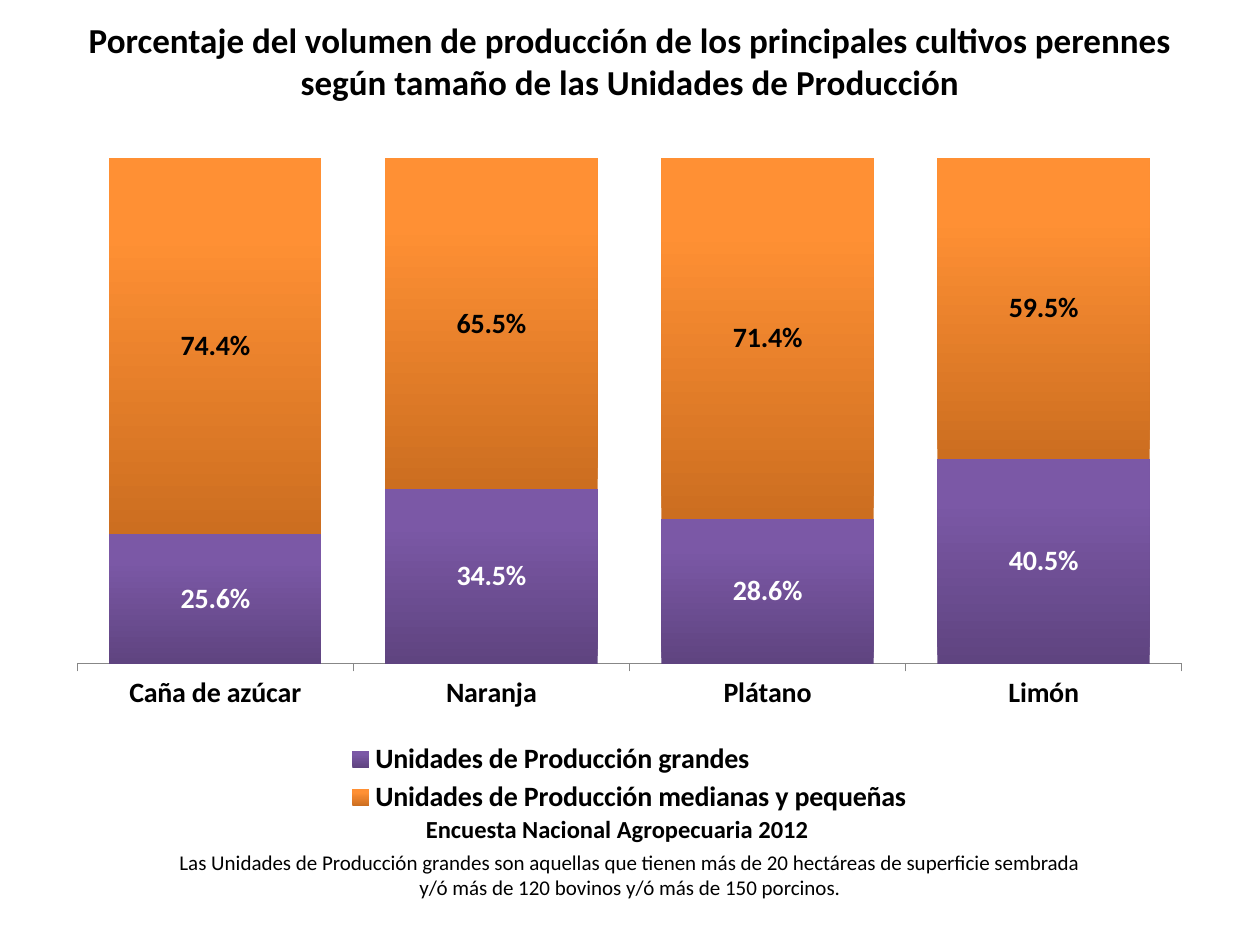
from copy import deepcopy

from lxml.etree import SubElement
from pptx import Presentation
from pptx.chart.data import CategoryChartData
from pptx.dml.color import RGBColor
from pptx.enum.chart import XL_CHART_TYPE as ChartType
from pptx.enum.chart import XL_LABEL_POSITION as LabelPosition
from pptx.enum.chart import XL_LEGEND_POSITION as LegendPosition
from pptx.enum.chart import XL_TICK_MARK as TickMark
from pptx.enum.shapes import MSO_SHAPE as ShapeKind
from pptx.enum.text import MSO_ANCHOR as Anchor
from pptx.enum.text import MSO_AUTO_SIZE as AutoSize
from pptx.enum.text import PP_ALIGN as Align
from pptx.oxml.ns import qn
from pptx.util import Pt

BLACK, WHITE, AXIS_GRAY = "000000", "FFFFFF", "878787"
PERCENT = "0.0%"

CROPS = ["Caña de azúcar", "Naranja", "Plátano", "Limón"]
# name, values, label colour, gradient from bottom to top
UNIT_SIZES = [
    ("Unidades de Producción grandes", [0.256, 0.345, 0.286, 0.405], WHITE,
     [(0, "5F4480"), (0.8, "7B58A6"), (1, "7C57A8")]),
    ("Unidades de Producción medianas y pequeñas", [0.744, 0.655, 0.714, 0.595], BLACK,
     [(0, "CC6E20"), (0.8, "FF9034"), (1, "FF9136")]),
]


def rgb(hex_color):
    return RGBColor.from_string(hex_color)


def apply(target, values):
    for name, value in values.items():
        setattr(target, name, value)


class SlideBuilder:
    font_name = "Calibri"

    def __init__(self, slide):
        self.slide = slide

    def style_font(self, font, size, bold=False, color=BLACK):
        apply(font, {"name": self.font_name, "size": Pt(size), "bold": bold})
        font.color.rgb = rgb(color)

    def fill_text(self, shape, lines, size, bold=False, wrap=True):
        frame = shape.text_frame
        apply(frame, {"text": "\n".join(lines), "word_wrap": wrap,
                      "auto_size": AutoSize.SHAPE_TO_FIT_TEXT,
                      "vertical_anchor": Anchor.TOP})
        for paragraph in frame.paragraphs:
            paragraph.alignment = Align.CENTER
            self.style_font(paragraph.font, size, bold)

    def text(self, box, lines, size, **options):
        self.fill_text(self.slide.shapes.add_textbox(*map(Pt, box)), lines, size, **options)

    def panel(self, box, lines, size, fill):
        shape = self.slide.shapes.add_shape(ShapeKind.RECTANGLE, *map(Pt, box))
        shape.shadow.inherit = False
        shape.fill.solid()
        shape.fill.fore_color.rgb = rgb(fill)
        shape.line.fill.background()
        self.fill_text(shape, lines, size)

    def gradient(self, series, stops):
        fill = series.format.fill
        fill.gradient()
        fill.gradient_angle = 90
        stop_list = series._element.xpath("c:spPr/a:gradFill/a:gsLst")[0]
        while len(stop_list) < len(stops):
            stop_list.append(deepcopy(stop_list[-1]))
        for stop, (position, color) in zip(fill.gradient_stops, stops):
            stop.position = position
            stop.color.rgb = rgb(color)

    def place(self, part, fractions, inner=False):
        """Set a manual layout: x, y, width and height as parts of the chart."""
        for old in part.findall(qn("c:layout")):
            part.remove(old)
        layout = SubElement(part, qn("c:layout"))
        manual = SubElement(layout, qn("c:manualLayout"))
        settings = [("layoutTarget", "inner")] if inner else []
        settings += [("xMode", "edge"), ("yMode", "edge")]
        settings += zip("xywh", map(str, fractions))
        for tag, value in settings:
            SubElement(manual, qn(f"c:{tag}")).set("val", value)
        # The layout follows the legend position, or opens the plot area
        part.insert(0 if inner else 1, layout)

    def stacked_chart(self, box, categories, groups, plot_area, legend_area):
        data = CategoryChartData(number_format=PERCENT)
        data.categories = categories
        for name, values, *_ in groups:
            data.add_series(name, values)
        chart = self.slide.shapes.add_chart(
            ChartType.COLUMN_STACKED_100, *map(Pt, box), data).chart
        self.style_font(chart.font, 10)
        apply(chart, {"has_title": False, "has_legend": True})

        # Columns and their labels
        plot = chart.plots[0]
        apply(plot, {"gap_width": 30, "overlap": 100, "vary_by_categories": False})
        for series, (_, _, label_color, stops) in zip(plot.series, groups):
            self.gradient(series, stops)
            labels = series.data_labels
            apply(labels, {"show_value": True, "number_format": PERCENT,
                           "number_format_is_linked": False,
                           "position": LabelPosition.CENTER})
            self.style_font(labels.font, 16, True, label_color)

        # Axes
        crops_axis, share_axis = chart.category_axis, chart.value_axis
        apply(crops_axis, {"major_tick_mark": TickMark.OUTSIDE,
                           "has_major_gridlines": False})
        self.style_font(crops_axis.tick_labels.font, 16, True)
        crops_axis.format.line.color.rgb = rgb(AXIS_GRAY)
        apply(share_axis, {"visible": False, "has_major_gridlines": False,
                           "minimum_scale": 0, "maximum_scale": 1})

        # Legend in two rows
        legend = chart.legend
        apply(legend, {"position": LegendPosition.BOTTOM, "include_in_layout": False})
        self.style_font(legend.font, 16, True)
        self.place(legend._element, legend_area)
        self.place(chart._chartSpace.chart.plotArea, plot_area, inner=True)


def main():
    deck = Presentation()
    apply(deck, {"slide_width": Pt(720), "slide_height": Pt(540)})
    builder = SlideBuilder(deck.slides.add_slide(deck.slide_layouts[6]))

    # Title
    builder.text((0, 7.2, 720, 55.7),
                 ["Porcentaje del volumen de producción de los principales cultivos perennes",
                  "según tamaño de las Unidades de Producción"], 20, bold=True)

    # Share of production by unit size
    builder.stacked_chart((31, 82.8, 657.4, 385.2), CROPS, UNIT_SIZES,
                          plot_area=(0.02, 0.02, 0.96, 0.75),
                          legend_area=(0.25, 0.88, 0.5, 0.12))

    # Definition and source
    builder.panel((92.2, 481.7, 535.7, 36),
                  ["Las Unidades de Producción grandes son aquellas que tienen más de 20 "
                   "hectáreas de superficie sembrada y/ó más de 120 bovinos y/ó más de "
                   "150 porcinos."], 12, WHITE)
    builder.text((235.4, 461.5, 234.7, 24.5),
                 ["Encuesta Nacional Agropecuaria 2012"], 14, bold=True, wrap=False)

    deck.save("out.pptx")


if __name__ == "__main__":
    main()
